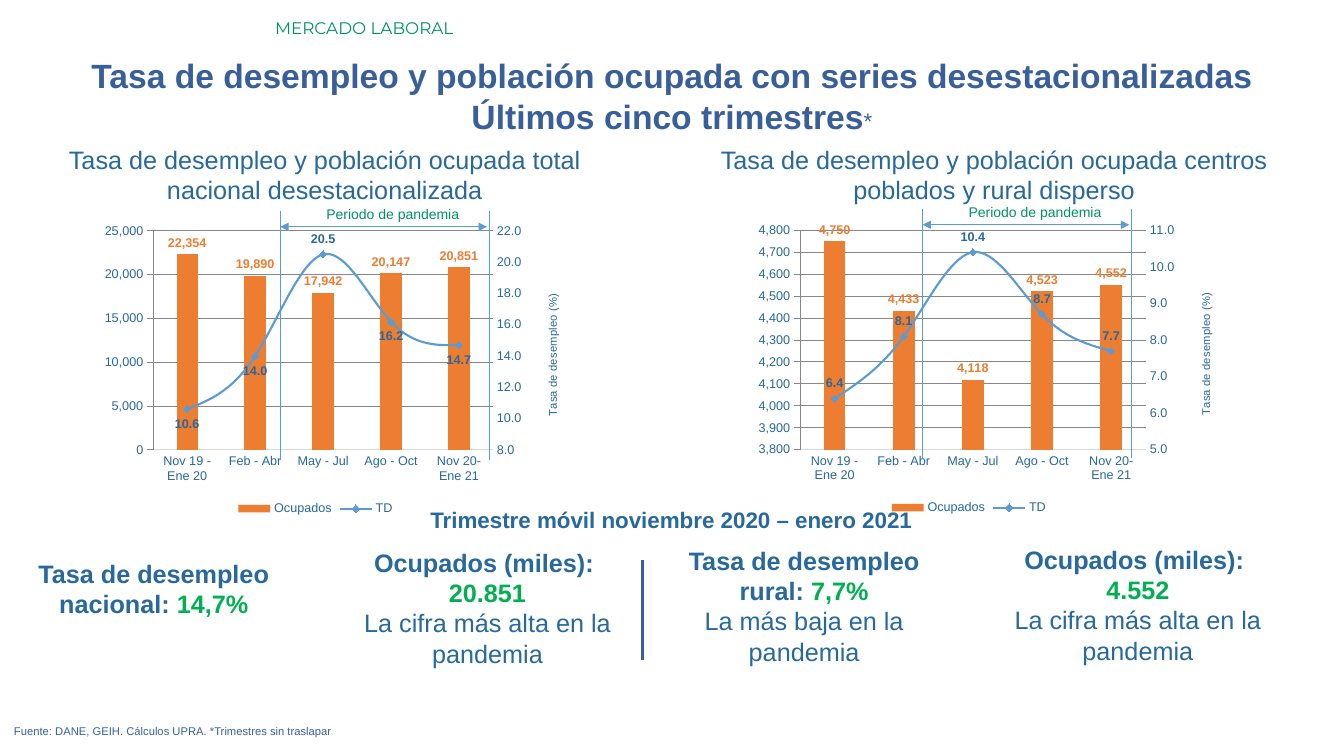
from lxml import etree
from pptx import Presentation
from pptx.chart.axis import ValueAxis
from pptx.chart.data import CategoryChartData
from pptx.dml.color import RGBColor
from pptx.enum.chart import XL_CHART_TYPE as ChartType, XL_LABEL_POSITION as LabelPos
from pptx.enum.chart import XL_LEGEND_POSITION as LegendPos, XL_MARKER_STYLE as Marker
from pptx.enum.chart import XL_TICK_MARK as Tick
from pptx.enum.shapes import MSO_CONNECTOR as Connector
from pptx.enum.text import MSO_AUTO_SIZE as AutoSize, PP_ALIGN as Align
from pptx.oxml import parse_xml
from pptx.oxml.ns import nsdecls, qn
from pptx.util import Inches, Pt

GREEN = RGBColor(0x00, 0x92, 0x67)
BRIGHT_GREEN = RGBColor(0x00, 0xB0, 0x50)
NAVY = RGBColor(0x39, 0x5F, 0x9B)
BLUE = RGBColor(0x27, 0x68, 0x9D)
LIGHT_BLUE = RGBColor(0x5B, 0x9B, 0xD5)
ORANGE = RGBColor(0xED, 0x7D, 0x31)
GREY = RGBColor(0xD9, 0xD9, 0xD9)

prs = Presentation()
prs.slide_width, prs.slide_height = Inches(13.33), Inches(7.5)
slide = prs.slides.add_slide(prs.slide_layouts[6])


def add_text(box, paragraphs, align=Align.CENTER, font="Arial"):
    """Each paragraph is a list of runs: (text, size, color, bold)."""
    frame = slide.shapes.add_textbox(*map(Inches, box)).text_frame
    frame.word_wrap = True
    frame.auto_size = AutoSize.SHAPE_TO_FIT_TEXT
    for i, runs in enumerate(paragraphs):
        paragraph = frame.paragraphs[0] if i == 0 else frame.add_paragraph()
        paragraph.alignment = align
        base = runs[0]
        paragraph.font.name = font
        paragraph.font.size = Pt(base[1])
        paragraph.font.color.rgb = base[2]
        paragraph.font.bold = base[3]
        for text, size, color, bold in runs:
            run = paragraph.add_run()
            run.text = text
            if size != base[1]:
                run.font.size = Pt(size)
            if color != base[2]:
                run.font.color.rgb = color
            if bold != base[3]:
                run.font.bold = bold


def add_line(start, end, color, width, arrows=False):
    line = slide.shapes.add_connector(Connector.STRAIGHT, *map(Inches, start + end))
    line.line.color.rgb = color
    line.line.width = Pt(width)
    if arrows:
        for tag in ("a:headEnd", "a:tailEnd"):
            etree.SubElement(line.line._get_or_add_ln(), qn(tag), type="triangle")
    etree.SubElement(line._element.spPr, qn("a:effectLst"))


# Headings and source
add_text((2.63, 0.13, 10.7, 0.3), [[("MERCADO LABORAL", 12, GREEN, False)]],
         Align.LEFT, "Montserrat")
add_text((0, 0.5, 13.33, 0.91), [
    [("Tasa de desempleo y población ocupada con series desestacionalizadas", 24, NAVY, True)],
    [("Últimos cinco trimestres", 24, NAVY, True), ("*", 16, NAVY, False)]])
add_text((0.04, 7.14, 12.91, 0.24),
         [[("Fuente: DANE, GEIH. Cálculos UPRA. *Trimestres sin traslapar", 8, NAVY, False)]],
         Align.JUSTIFY)

# Key figures
add_text((4.17, 4.97, 5, 0.37),
         [[("Trimestre móvil noviembre 2020 – enero 2021", 16, BLUE, True)]], Align.LEFT)
add_text((0.13, 5.49, 2.79, 0.71), [
    [("Tasa de desempleo nacional: ", 18, BLUE, True), ("14,7%", 18, BRIGHT_GREEN, True)]])
add_text((6.58, 5.36, 2.79, 1.31), [
    [("Tasa de desempleo rural: ", 18, BLUE, True), ("7,7%", 18, BRIGHT_GREEN, True)],
    [("La más baja en la pandemia", 18, BLUE, False)]])
for left, top, employed in ((3.08, 5.38, "20.851"), (9.53, 5.35, "4.552")):
    add_text((left, top, 3.51, 1.31), [
        [("Ocupados (miles): ", 18, BLUE, True)],
        [(employed, 18, BRIGHT_GREEN, True)],
        [("La cifra más alta en la pandemia", 18, BLUE, False)]])
add_line((6.37, 5.56), (6.37, 6.55), NAVY, 2.25)

# National and rural panels
QUARTERS = ["Nov 19 - Ene 20", "Feb - Abr", "May - Jul", "Ago - Oct", "Nov 20- Ene 21"]
panels = [
    dict(heading="Tasa de desempleo y población ocupada total nacional desestacionalizada",
         heading_left=0.37, chart_at=(0.63, 2.16), plot=(0.178, 0.044, 0.674, 0.724),
         employed=(22354, 19890, 17942, 20147, 20851), employed_scale=(0, 25000, 5000),
         rate=(10.6, 14, 20.5, 16.2, 14.7), rate_scale=(8, 22, 2),
         rate_labels=LabelPos.BELOW, period_at=(2.78, 2.09)),
    dict(heading="Tasa de desempleo y población ocupada centros poblados y rural disperso",
         heading_left=7.01, chart_at=(7.11, 2.15), plot=(0.165, 0.045, 0.686, 0.726),
         employed=(4750, 4433, 4118, 4523, 4552), employed_scale=(3800, 4800, 100),
         rate=(6.4, 8.1, 10.4, 8.7, 7.7), rate_scale=(5, 11, 1),
         rate_labels=LabelPos.ABOVE, period_at=(9.15, 2.07)),
]
for panel in panels:
    add_text((panel["heading_left"], 1.38, 5.7, 0.71), [[(panel["heading"], 18, BLUE, False)]])

    data = CategoryChartData()
    data.categories = QUARTERS
    data.add_series("Ocupados", panel["employed"], "#,##0")
    data.add_series("TD", panel["rate"], "0.0")
    chart = slide.shapes.add_chart(
        ChartType.COLUMN_CLUSTERED, *map(Inches, panel["chart_at"] + (5, 3)), data).chart
    chart.has_title = False
    chart.font.name, chart.font.size = "Arial", Pt(9)
    chart.font.color.rgb = BLUE
    chart.has_legend = True
    chart.legend.position = LegendPos.BOTTOM
    chart.legend.include_in_layout = False
    bars = chart.plots[0]
    bars.gap_width, bars.overlap = 219, -27
    bars.vary_by_categories = False

    # Unemployment rate as a line on its own axis
    plot_area = bars._element.getparent()
    rate_xml = bars.series[1]._element
    for flag in rate_xml.findall(qn("c:invertIfNegative")):
        rate_xml.remove(flag)
    line_chart = parse_xml(
        f'<c:lineChart {nsdecls("c")}><c:grouping val="standard"/><c:varyColors val="0"/>'
        '<c:marker val="1"/><c:axId val="5001"/><c:axId val="5002"/></c:lineChart>')
    line_chart.insert(2, rate_xml)
    bars._element.addnext(line_chart)
    rate_axis_xml = parse_xml(
        f'<c:valAx {nsdecls("c")}><c:axId val="5002"/>'
        '<c:scaling><c:orientation val="minMax"/></c:scaling><c:delete val="0"/>'
        '<c:axPos val="r"/><c:numFmt formatCode="0.0" sourceLinked="0"/>'
        '<c:majorTickMark val="out"/><c:minorTickMark val="none"/>'
        '<c:tickLblPos val="nextTo"/><c:crossAx val="5001"/><c:crosses val="max"/></c:valAx>')
    hidden_axis_xml = parse_xml(
        f'<c:catAx {nsdecls("c")}><c:axId val="5001"/>'
        '<c:scaling><c:orientation val="minMax"/></c:scaling><c:delete val="1"/>'
        '<c:axPos val="b"/><c:crossAx val="5002"/><c:crosses val="autoZero"/></c:catAx>')
    chart.value_axis._element.addnext(rate_axis_xml)
    rate_axis_xml.addnext(hidden_axis_xml)

    # Axes
    quarter_axis = chart.category_axis
    quarter_axis.major_tick_mark = Tick.NONE
    quarter_axis.format.line.color.rgb = GREY
    quarter_axis.format.line.width = Pt(0.75)
    # Where the tick labels sit when the scale starts above zero
    layouts = [(plot_area, 0, panel["plot"])]
    chart.value_axis.major_tick_mark = Tick.NONE
    for axis, title, title_at, scale, number_format in (
            (chart.value_axis, "Ocupados (miles)", (0.043, 0.3),
             panel["employed_scale"], "#,##0"),
            (ValueAxis(rate_axis_xml), "Tasa de desempleo (%)", (0.951, 0.245),
             panel["rate_scale"], "0.0")):
        axis.minimum_scale, axis.maximum_scale, axis.major_unit = scale
        axis.has_major_gridlines = False
        axis.format.line.fill.background()
        axis.tick_labels.number_format = number_format
        axis.tick_labels.number_format_is_linked = False
        axis.tick_labels.font.size = Pt(9)
        axis.tick_labels.font.color.rgb = BLUE
        frame = axis.axis_title.text_frame
        frame.text = title
        frame._txBody.bodyPr.set("rot", "-5400000")
        frame._txBody.bodyPr.set("vert", "horz")
        title_font = frame.paragraphs[0].font
        title_font.name, title_font.size, title_font.bold = "Arial", Pt(8), False
        title_font.color.rgb = BLUE
        layouts.append((axis.axis_title._element, 1, title_at))
    for parent, index, values in layouts:
        for old in parent.findall(qn("c:layout")):
            parent.remove(old)
        layout = etree.Element(qn("c:layout"))
        manual = etree.SubElement(layout, qn("c:manualLayout"))
        settings = [("xMode", "edge"), ("yMode", "edge"), *zip("xywh", values)]
        if parent is plot_area:
            settings.insert(0, ("layoutTarget", "inner"))
        for tag, value in settings:
            etree.SubElement(manual, qn(f"c:{tag}"), val=str(value))
        parent.insert(index, layout)

    # Series and labels
    employed, rate = bars.series[0], chart.plots[1].series[0]
    employed.format.fill.solid()
    employed.format.fill.fore_color.rgb = ORANGE
    rate.smooth = True
    rate.format.line.color.rgb = LIGHT_BLUE
    rate.format.line.width = Pt(1.5)
    rate.marker.style, rate.marker.size = Marker.DIAMOND, 5
    rate.marker.format.fill.solid()
    rate.marker.format.fill.fore_color.rgb = LIGHT_BLUE
    rate.marker.format.line.color.rgb = LIGHT_BLUE
    for series, color, position, number_format in (
            (employed, ORANGE, LabelPos.OUTSIDE_END, "#,##0"),
            (rate, BLUE, panel["rate_labels"], "0.0")):
        labels = series.data_labels
        labels.show_value = True
        labels.position = position
        labels.number_format, labels.number_format_is_linked = number_format, False
        labels.font.name, labels.font.size, labels.font.bold = "Arial", Pt(9), True
        labels.font.color.rgb = color
    peak = rate.points[2].data_label
    peak.font.name, peak.font.size, peak.font.bold = "Arial", Pt(9), True
    peak.font.color.rgb = BLUE
    peak.position = LabelPos.ABOVE

    # Pandemic period
    left, top = panel["period_at"]
    for x in (left, left + 2.07):
        add_line((x, top), (x, top + 2.47), LIGHT_BLUE, 0.5)
    add_line((left, top + 0.16), (left + 2.05, top + 0.16), LIGHT_BLUE, 0.5, arrows=True)
    add_text((left + 0.18, top - 0.1, 1.87, 0.27), [[("Periodo de pandemia", 10, GREEN, False)]])

prs.save("out.pptx")
